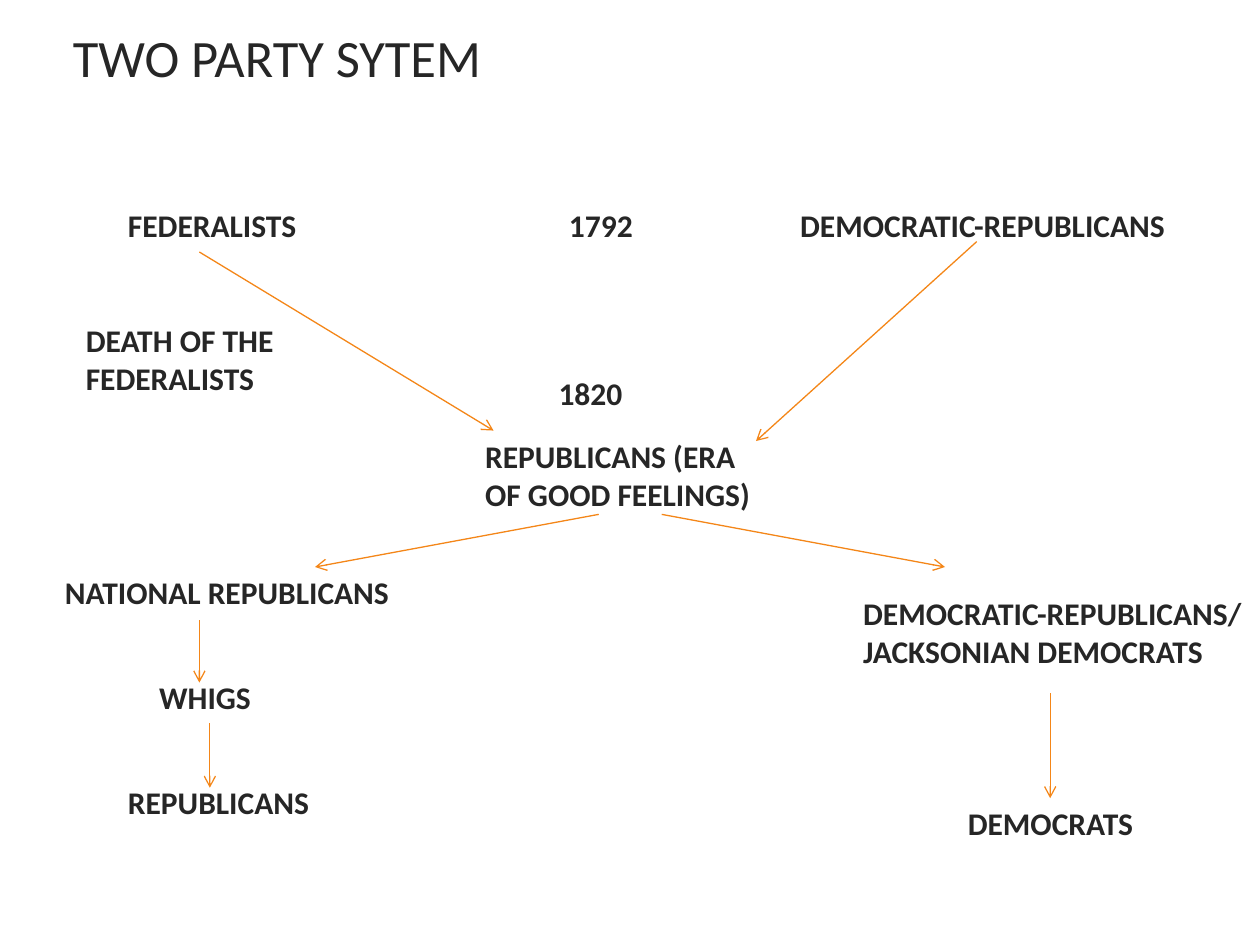
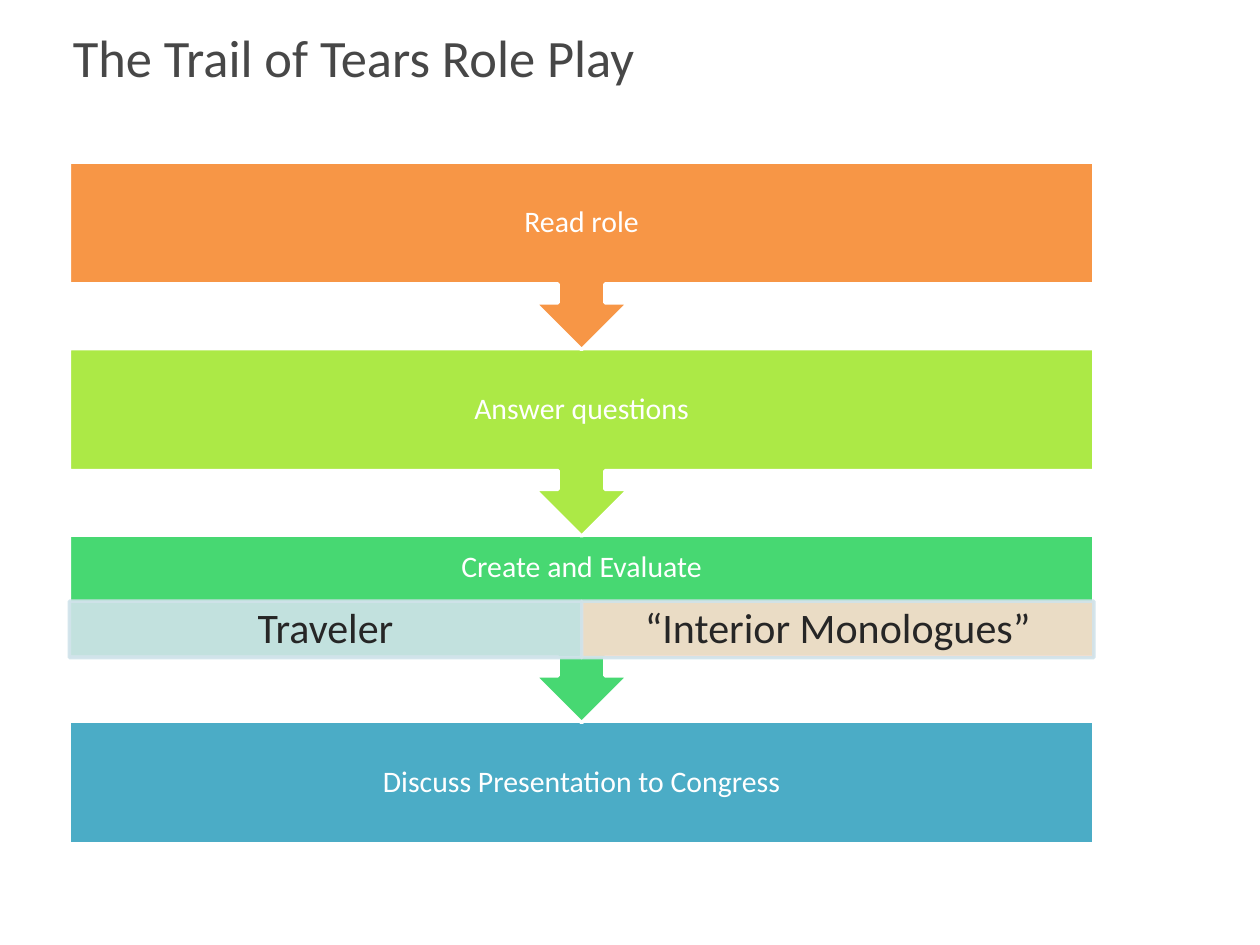
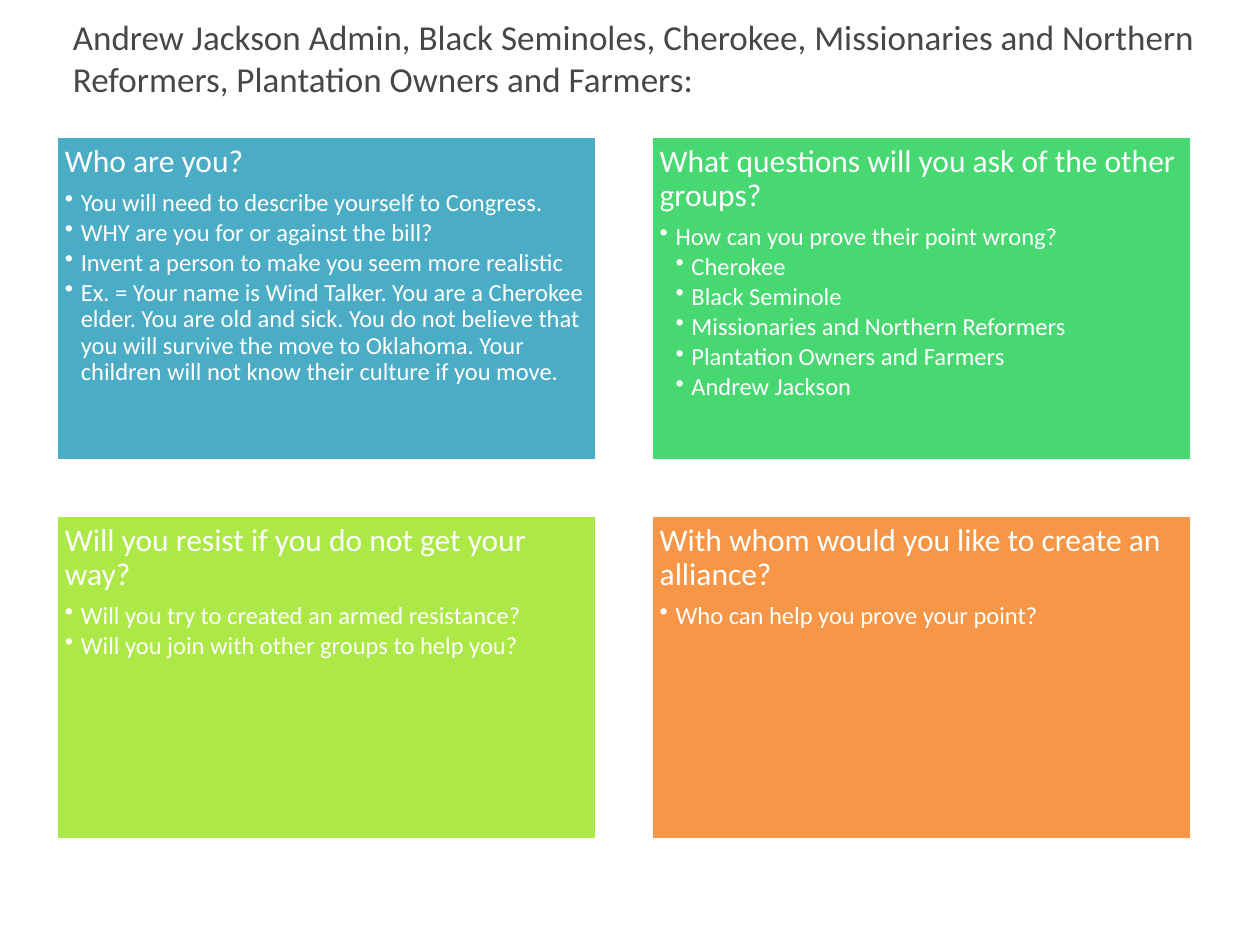
from lxml import etree
from pptx import Presentation
from pptx import util as u
from pptx.dml.color import RGBColor
from pptx.enum import shapes, text
from pptx.oxml.ns import qn

FONT = "Calibri"
DARK, GREY, WHITE = "262626", "474747", "FFFFFF"
BLUE, GREEN, LIME, ORANGE = "4BACC6", "47D872", "ACE946", "F79646"
ARROW, ICE, PEACH = "F48618", "D0E3EA", "FCDDCF"


def color(value):
    return RGBColor.from_string(value)


class Deck:
    """Holds the style and the current slide."""

    def __init__(self):
        self.presentation = Presentation()
        self.presentation.slide_width = u.Cm(25.4)
        self.presentation.slide_height = u.Cm(19.05)
        self.slide = None

    def new_slide(self, title, size=30, title_color=GREY):
        self.slide = self.presentation.slides.add_slide(self.presentation.slide_layouts[6])
        frame = self.text_box(1.22, 0.2, 23.34, 1.9)
        frame.vertical_anchor = text.MSO_ANCHOR.MIDDLE
        self.set_text(frame.paragraphs[0], title, size, title_color)

    def text_box(self, left, top, width, height):
        box = self.slide.shapes.add_textbox(u.Cm(left), u.Cm(top), u.Cm(width), u.Cm(height))
        box.text_frame.word_wrap = True
        return box.text_frame

    def set_text(self, paragraph, words, size, font_color, bold=False):
        paragraph.text = words
        font = paragraph.font
        font.name, font.size, font.bold = FONT, u.Pt(size), bold
        font.color.rgb = color(font_color)

    def label(self, words, left, top, width, height=1.02):
        frame = self.text_box(left, top, width, height)
        self.set_text(frame.paragraphs[0], words, 18, DARK, bold=True)

    def arrow(self, *ends):
        connector = self.slide.shapes.add_connector(
            shapes.MSO_CONNECTOR.STRAIGHT, *(u.Cm(end) for end in ends))
        connector.line.color.rgb = color(ARROW)
        connector.line.width = u.Pt(0.75)
        properties = connector._element.spPr
        etree.SubElement(properties.find(qn("a:ln")), qn("a:tailEnd"), type="arrow")
        etree.SubElement(properties, qn("a:effectLst"))

    def block(self, kind, left, top, width, height, fill, line=WHITE, opacity=100):
        shape = self.slide.shapes.add_shape(
            kind, u.Cm(left), u.Cm(top), u.Cm(width), u.Cm(height))
        shape.shadow.inherit = False
        shape.fill.solid()
        shape.fill.fore_color.rgb = color(fill)
        shape.line.color.rgb = color(line)
        shape.line.width = u.Pt(2)
        if opacity < 100:
            for node in list(shape._element.spPr.iter(qn("a:srgbClr"))):
                etree.SubElement(node, qn("a:alpha"), val=str(opacity * 1000))
        shape.text_frame.word_wrap = True
        return shape

    def insets(self, frame, side, top, bottom):
        frame.margin_left = frame.margin_right = u.Cm(side)
        frame.margin_top, frame.margin_bottom = u.Cm(top), u.Cm(bottom)

    def caption(self, shape, words, size, font_color, side, top, bottom):
        frame = shape.text_frame
        frame.vertical_anchor = text.MSO_ANCHOR.MIDDLE
        self.insets(frame, side, top, bottom)
        paragraph = frame.paragraphs[0]
        paragraph.alignment = text.PP_ALIGN.CENTER
        paragraph.line_spacing = 0.9
        self.set_text(paragraph, words, size, font_color)

    def card(self, left, top, width, height, fill, heading, points):
        """A filled card: a heading, then (level, words) bullets."""
        frame = self.block(shapes.MSO_SHAPE.RECTANGLE, left, top, width, height, fill).text_frame
        frame.vertical_anchor = text.MSO_ANCHOR.TOP
        self.insets(frame, 0.17, 0.17, 0.17)
        for level, words in [(0, heading), *points]:
            paragraph = frame.add_paragraph() if level else frame.paragraphs[0]
            paragraph.alignment = text.PP_ALIGN.LEFT
            paragraph.level = level
            if level:
                properties = paragraph._p.get_or_add_pPr()
                properties.set("marL", str(u.Cm(0.32 * level)))
                properties.set("indent", str(-u.Cm(0.32)))
                etree.SubElement(properties, qn("a:buChar"), char="•")
            paragraph.line_spacing = 0.9
            paragraph.space_after = u.Pt(2.1 if level else 6.3)
            self.set_text(paragraph, words, 14 if level else 18, WHITE)


def party_slide(deck):
    deck.new_slide("TWO PARTY SYTEM", title_color=DARK)
    # Parties and years
    for label in [
        ("FEDERALISTS", 2.33, 4.02, 4.45),
        ("DEMOCRATIC-REPUBLICANS", 15.88, 4.02, 8.89),
        ("1792", 11.22, 4.02, 2.33),
        ("REPUBLICANS (ERA OF GOOD FEELINGS)", 9.53, 8.68, 6.35, 1.8),
        ("1820", 11.01, 7.41, 2.33),
        ("DEATH OF THE FEDERALISTS", 1.48, 6.35, 5.08, 1.8),
        ("NATIONAL REPUBLICANS", 1.06, 11.43, 7.2),
        ("WHIGS", 2.96, 13.55, 2.54),
        ("REPUBLICANS", 2.33, 15.66, 4.45),
        ("DEMOCRATIC-REPUBLICANS/ JACKSONIAN DEMOCRATS", 17.15, 11.85, 8.25, 1.8),
        ("DEMOCRATS", 19.26, 16.09, 4.45),
    ]:
        deck.label(*label)
    # Lines of descent
    for ends in [
        (4.02, 5.08, 9.95, 8.68),
        (19.69, 4.87, 15.24, 8.89),
        (12.07, 10.37, 6.35, 11.43),
        (13.34, 10.37, 19.05, 11.43),
        (4.02, 12.5, 4.02, 13.76),
        (4.23, 14.58, 4.23, 15.88),
        (21.17, 13.97, 21.17, 16.09),
    ]:
        deck.arrow(*ends)


def role_play_slide(deck):
    deck.new_slide("The Trail of Tears Role Play")
    left, first_top, width, pitch = 1.4, 3.27, 20.65, 3.76
    body, strip, margin = 2.46, 1.14, 0.33
    steps = [
        ("Read role", ORANGE, ()),
        ("Answer questions", LIME, ()),
        ("Create and Evaluate", GREEN, (("Traveler", ICE), ("“Interior Monologues”", PEACH))),
        ("Discuss Presentation to Congress", BLUE, ()),
    ]
    # Last step first, so that each arrow lies over the step below it
    for index, (words, fill, parts) in reversed(list(enumerate(steps))):
        top = first_top + index * pitch
        is_last = index == len(steps) - 1
        kind = shapes.MSO_SHAPE.RECTANGLE if is_last else shapes.MSO_SHAPE.DOWN_ARROW_CALLOUT
        step = deck.block(kind, left, top, width, body if is_last else 3.78, fill)
        deck.caption(step, words, 17, WHITE, margin, margin, margin + (strip if parts else 0))
        for column, (part, part_fill) in enumerate(parts):
            half = width / 2
            cell = deck.block(shapes.MSO_SHAPE.RECTANGLE, left + column * half,
                              top + body - strip + 0.01, half, strip, part_fill, ICE, 90)
            deck.caption(cell, part, 24, DARK, 0.48, 0.08, 0.08)


def questions_slide(deck):
    deck.new_slide("Andrew Jackson Admin, Black Seminoles, Cherokee, Missionaries and Northern "
                   "Reformers, Plantation Owners and Farmers:", size=20)
    cards = [
        (BLUE, "Who are you?", [
            (1, "You will need to describe yourself to Congress."),
            (1, "WHY are you for or against the bill?"),
            (1, "Invent a person to make you seem more realistic"),
            (1, "Ex. = Your name is Wind Talker. You are a Cherokee elder. You are old and sick. "
                "You do not believe that you will survive the move to Oklahoma. "
                "Your children will not know their culture if you move."),
        ]),
        (GREEN, "What questions will you ask of the other groups?", [
            (1, "How can you prove their point wrong?"),
            (2, "Cherokee"),
            (2, "Black Seminole"),
            (2, "Missionaries and Northern Reformers"),
            (2, "Plantation Owners and Farmers"),
            (2, "Andrew Jackson"),
        ]),
        (LIME, "Will you resist if you do not get your way?", [
            (1, "Will you try to created an armed resistance?"),
            (1, "Will you join with other groups to help you?"),
        ]),
        (ORANGE, "With whom would you like to create an alliance?", [
            (1, "Who can help you prove your point?"),
        ]),
    ]
    # Two by two grid
    for index, card in enumerate(cards):
        row, column = divmod(index, 2)
        deck.card(1.14 + column * 11.99, 2.75 + row * 7.64, 10.9, 6.55, *card)


def main():
    deck = Deck()
    party_slide(deck)
    role_play_slide(deck)
    questions_slide(deck)
    deck.presentation.save("out.pptx")


if __name__ == "__main__":
    main()
